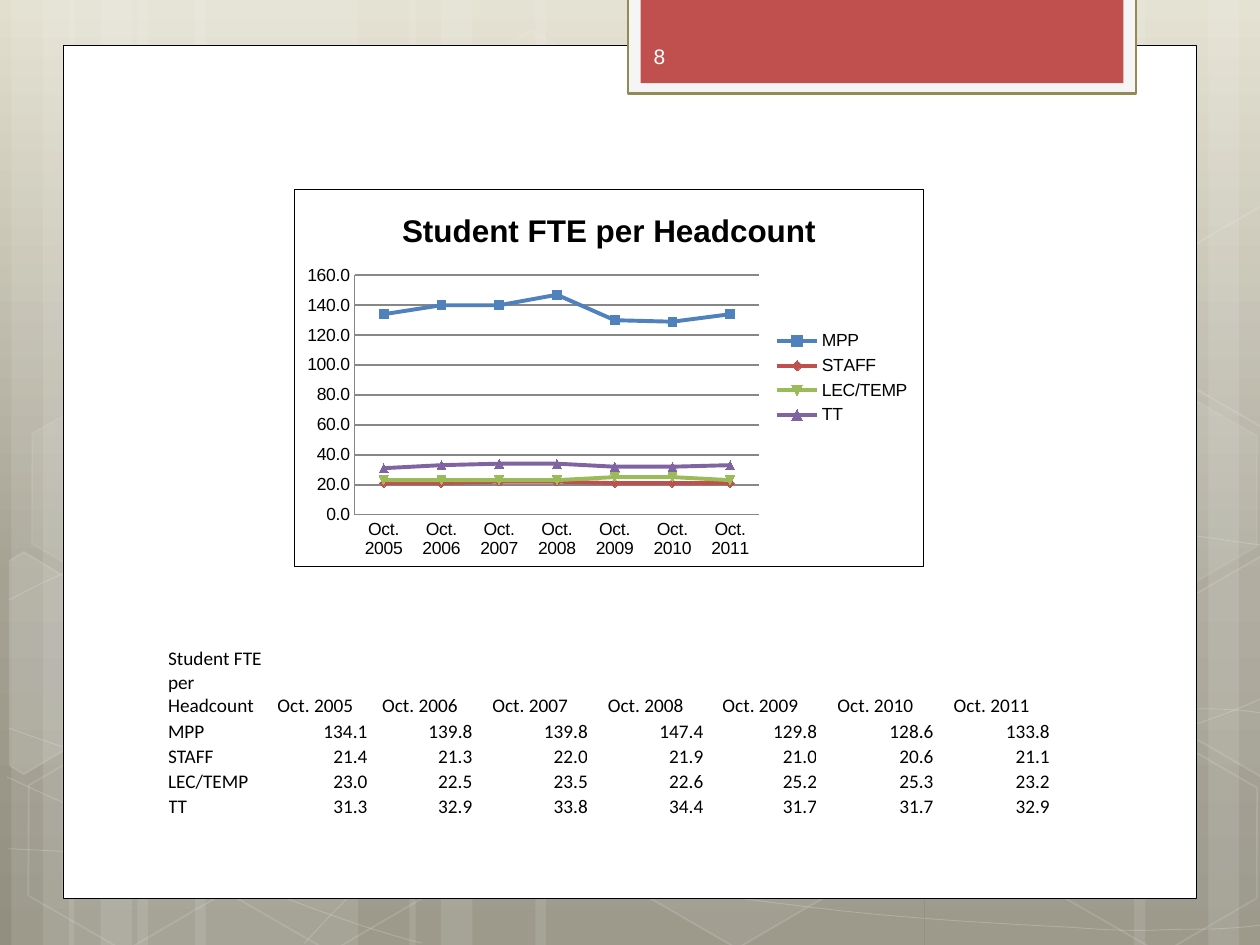
from copy import deepcopy
from math import cos, radians, sin

from pptx import Presentation
from pptx.chart import data as chart_data
from pptx.dml.color import RGBColor
from pptx.enum import chart as ch, shapes, text as tx
from pptx.oxml import parse_xml
from pptx.oxml.ns import nsdecls, qn
from pptx.util import Pt

WHITE, BLACK = RGBColor(255, 255, 255), RGBColor(0, 0, 0)
SAND = [(0, RGBColor(0xE2, 0xDF, 0xCF)), (0.62, RGBColor(0xA5, 0xA2, 0x93)),
        (1, RGBColor(0x92, 0x8F, 0x80))]
PALE, OLIVE = RGBColor(0xF5, 0xF5, 0xF5), RGBColor(0x94, 0x8A, 0x54)
RED, NUMBER = RGBColor(0xC0, 0x50, 0x4D), RGBColor(0xFE, 0xFE, 0xFE)
GRID = RGBColor(0x87, 0x87, 0x87)
SERIES = [RGBColor(0x4F, 0x81, 0xBD), RED,
          RGBColor(0x9B, 0xBB, 0x59), RGBColor(0x80, 0x64, 0xA2)]

HEADING = "Student FTE per Headcount"
DATES = [f"Oct. {year}" for year in range(2005, 2012)]
RATIOS = {
    "MPP": [134.1, 139.8, 139.8, 147.4, 129.8, 128.6, 133.8],
    "STAFF": [21.4, 21.3, 22.0, 21.9, 21.0, 20.6, 21.1],
    "LEC/TEMP": [23.0, 22.5, 23.5, 22.6, 25.2, 25.3, 23.2],
    "TT": [31.3, 32.9, 33.8, 34.4, 31.7, 31.7, 32.9],
}
PLOTTED = {
    "MPP": [134, 140, 140, 147, 130, 129, 134],
    "STAFF": [21, 21, 22, 22, 21, 21, 21],
    "LEC/TEMP": [23, 23, 23, 23, 25, 25, 23],
    "TT": [31, 33, 34, 34, 32, 32, 33],
}

# Background decoration: stripes (left, width), curves, outlines, hexagons
STRIPES = [(78.5, 126), (6.5, 36), (24.5, 60), (111.5, 126), (39.5, 36), (57.5, 60),
           (528.5, 126), (690.5, 36), (648, 60), (306, 222), (234, 36), (252, 60)]
CURVES = [
    [(5, 485), (44, 487), (83, 489), (137, 488), (191, 487), (258, 486), (330, 479),
     (402, 472), (504, 458), (570, 444), (636, 431), (703, 409), (725, 397)],
    [(5, 343), (26, 332), (47, 321), (87, 310), (128, 300), (186, 284), (250, 279),
     (314, 274), (387, 273), (471, 279), (550, 284), (682, 307), (725, 312)],
    [(4, 444), (91, 484), (178, 523), (241, 539)],
    [(5, 416), (27, 424), (50, 432), (92, 444), (134, 454), (197, 472), (257, 485),
     (317, 497), (392, 510), (452, 517), (512, 525), (576, 528), (614, 530),
     (652, 533), (662, 531), (680, 531), (699, 531), (711, 530), (725, 528)],
    [(174, 539), (187, 525), (200, 510), (217, 498), (235, 484), (259, 470), (279, 460),
     (300, 451), (312, 446), (338, 438), (364, 431), (413, 421), (438, 416),
     (464, 411), (467, 411), (490, 410), (512, 407), (547, 405), (572, 405),
     (597, 404), (638, 405), (638, 405), (654, 405), (670, 405), (686, 405),
     (699, 405), (711, 406), (718, 407), (724, 408), (722, 407), (724, 408)],
]
LEFT_EDGE = [(6, 320), (14, 315), (69, 348), (68, 410), (14, 442), (6, 437)]
RIGHT_EDGE = [(667, 349), (721.5, 317.5), (726.5, 321), (726.5, 441), (721.5, 444), (667, 412.5)]
# left, top, fill opacity, line opacity
HEXAGONS = [(240.5, 26, 4, 8), (358, 424, 6, 12), (8, 425.5, 0, 12), (10, 224.5, 7, 8),
            (125.5, 426, 0, 12), (542, 326, 10, 12), (600.5, 427, 0, 12), (600.5, 226, 7, 8)]
TILT = 30


def write(frame, words, size=11, font="Calibri", color=BLACK, bold=False,
          align=tx.PP_ALIGN.LEFT):
    paragraph = frame.paragraphs[0]
    paragraph.alignment = align
    run = paragraph.add_run()
    run.text = words
    run.font.size, run.font.name, run.font.bold = Pt(size), font, bold
    run.font.color.rgb = color


def turn(points, pivot, degrees):
    c, s = cos(radians(degrees)), sin(radians(degrees))
    px, py = pivot
    return [(px + (x - px) * c - (y - py) * s, py + (x - px) * s + (y - py) * c)
            for x, y in points]


class Deck:
    def __init__(self, width, height):
        self.prs = Presentation()
        self.prs.slide_width, self.prs.slide_height = Pt(width), Pt(height)
        self.slide = self.prs.slides.add_slide(self.prs.slide_layouts[6])
        self.shapes = self.slide.shapes

    def backdrop(self, stops):
        fill = self.slide.background.fill
        fill.gradient()
        fill.gradient_angle = 270
        first = self.slide.element.find(".//" + qn("a:gs"))
        first.addnext(deepcopy(first))
        for stop, (position, color) in zip(fill.gradient_stops, stops):
            stop.position, stop.color.rgb = position, color

    def paint(self, shape, fill=None, opacity=100, line=None, weight=1, line_opacity=100):
        shape.shadow.inherit = False
        for part, target, color, alpha in (("a:solidFill", shape.fill, fill, opacity),
                                           ("a:ln/a:solidFill", shape.line.fill, line, line_opacity)):
            if color is None or alpha == 0:
                target.background()
                continue
            target.solid()
            target.fore_color.rgb = color
            if alpha < 100:
                tint = shape.element.spPr.xpath(part + "/a:srgbClr")[0]
                tint.append(parse_xml(f'<a:alpha {nsdecls("a")} val="{alpha * 1000}"/>'))
        if line is not None:
            shape.line.width = Pt(weight)

    def preset(self, kind, left, top, width, height, rotation=0, **style):
        shape = self.shapes.add_shape(kind, Pt(left), Pt(top), Pt(width), Pt(height))
        shape.rotation = rotation
        self.paint(shape, **style)
        return shape

    def rect(self, *frame, **style):
        return self.preset(shapes.MSO_SHAPE.RECTANGLE, *frame, **style)

    def hexagon(self, left, top, **style):
        shape = self.preset(shapes.MSO_SHAPE.HEXAGON, left, top, 126, 109.5, TILT, **style)
        shape.adjustments[0] = 0.285

    def outline(self, points, close=True, **style):
        (x, y), *rest = [(Pt(px), Pt(py)) for px, py in points]
        builder = self.shapes.build_freeform(x, y)
        builder.add_line_segments(rest, close=close)
        shape = builder.convert_to_shape()
        self.paint(shape, **style)
        return shape

    def tilted_outline(self, points, pivot, **style):
        self.outline(turn(points, pivot, -TILT), **style).rotation = TILT

    def curve(self, points, **style):
        """Chain of cubic curves: each three points after the start make one."""
        shape = self.outline(points, close=False, **style)
        lines = shape.element.spPr.xpath(".//a:lnTo")
        for i in range(0, len(lines), 3):
            cubic = parse_xml(f'<a:cubicBezTo {nsdecls("a")}/>')
            lines[i].addprevious(cubic)
            for line in lines[i:i + 3]:
                cubic.append(line[0])
                line.getparent().remove(line)

    def label(self, words, left, top, width, height, **style):
        frame = self.shapes.add_textbox(Pt(left), Pt(top), Pt(width), Pt(height)).text_frame
        frame.word_wrap = True
        frame.vertical_anchor = tx.MSO_ANCHOR.MIDDLE
        write(frame, words, **style)

    def line_chart(self, title, cats, rows, left, top, width, height):
        data = chart_data.CategoryChartData(number_format="0.0")
        data.categories = cats
        for name, values in rows.items():
            data.add_series(name, values)
        chart = self.shapes.add_chart(ch.XL_CHART_TYPE.LINE_MARKERS, Pt(left), Pt(top),
                                      Pt(width), Pt(height), data).chart
        chart.font.size, chart.font.name, chart.font.color.rgb = Pt(10), "Arial", BLACK
        write(chart.chart_title.text_frame, title, size=18, font="Arial", bold=True,
              align=tx.PP_ALIGN.CENTER)
        chart.has_legend = True
        chart.legend.position = ch.XL_LEGEND_POSITION.RIGHT
        chart.legend.include_in_layout = False
        scale = chart.value_axis
        scale.tick_labels.number_format = "0.0"
        scale.tick_labels.number_format_is_linked = False
        for axis in (chart.category_axis, scale):
            axis.major_tick_mark = ch.XL_TICK_MARK.NONE
            axis.format.line.color.rgb = GRID
        grid = scale.major_gridlines.format.line
        grid.color.rgb, grid.width = GRID, Pt(1)
        chart.plots[0].vary_by_categories = False
        for series, color in zip(chart.plots[0].series, SERIES):
            series.smooth = False
            series.format.line.color.rgb, series.format.line.width = color, Pt(2.25)
            series.marker.format.fill.solid()
            series.marker.format.fill.fore_color.rgb = color
            series.marker.format.line.color.rgb = color
        # Chart frame
        chart.element.find(qn("c:chart")).addnext(parse_xml(
            f'<c:spPr {nsdecls("c", "a")}><a:solidFill><a:srgbClr val="{WHITE}"/></a:solidFill>'
            f'<a:ln w="{Pt(0.75)}"><a:solidFill><a:srgbClr val="{BLACK}"/></a:solidFill></a:ln></c:spPr>'))

    def table(self, rows, left, top, widths, heights):
        table = self.shapes.add_table(len(rows), len(widths), Pt(left), Pt(top),
                                      Pt(sum(widths)), Pt(sum(heights))).table
        table.first_row = table.horz_banding = False
        for column, width in zip(table.columns, widths):
            column.width = Pt(width)
        for r, (row, height) in enumerate(zip(rows, heights)):
            table.rows[r].height = Pt(height)
            for c, words in enumerate(row):
                cell = table.cell(r, c)
                cell.fill.background()
                cell.margin_left = cell.margin_right = cell.margin_top = cell.margin_bottom = 0
                cell.vertical_anchor = tx.MSO_ANCHOR.BOTTOM
                figures = tx.PP_ALIGN.RIGHT if r else tx.PP_ALIGN.CENTER
                write(cell.text_frame, words, align=figures if c else tx.PP_ALIGN.LEFT)


def main():
    deck = Deck(720, 540)
    # Background
    deck.backdrop(SAND)
    for left, width in STRIPES:
        deck.rect(left, 0, width, 540, fill=WHITE, opacity=10)
    for curve in CURVES:
        deck.curve(curve, line=WHITE, weight=0.5, line_opacity=20)
    for left, top, opacity, line_opacity in HEXAGONS:
        deck.hexagon(left, top, fill=WHITE, opacity=opacity, line=WHITE, line_opacity=line_opacity)
    upper_right = [(x, y - 200) for x, y in RIGHT_EDGE]
    for edge, pivot, opacity in ((LEFT_EDGE, (26, 386), 10), (RIGHT_EDGE, (709, 374.5), 4),
                                 (upper_right, (709, 174.5), 0)):
        deck.tilted_outline(edge, pivot, fill=WHITE, opacity=opacity, line=WHITE, line_opacity=12)
    # Card and page tab
    deck.rect(36, 26, 648, 487.5, fill=WHITE, line=BLACK, weight=0.5)
    deck.rect(359, -1.5, 290, 55, fill=PALE, line=OLIVE, weight=1.25)
    deck.rect(366, -1.5, 276, 49, fill=RED)
    # Chart and its figures
    deck.line_chart(HEADING, DATES, PLOTTED, 168, 108, 360, 216)
    rows = [[HEADING, *DATES]] + [[name, *(f"{v:.1f}" for v in values)]
                                  for name, values in RATIOS.items()]
    deck.table(rows, 96, 360, [54.5, 59.5, 60, 66, 66, 65, 66.5, 66.5], [50.4] + [14.4] * 4)
    # Page number
    deck.label("8", 366.5, 17.5, 105, 29, size=12, font="Arial", color=NUMBER)
    deck.prs.save("out.pptx")


if __name__ == "__main__":
    main()
